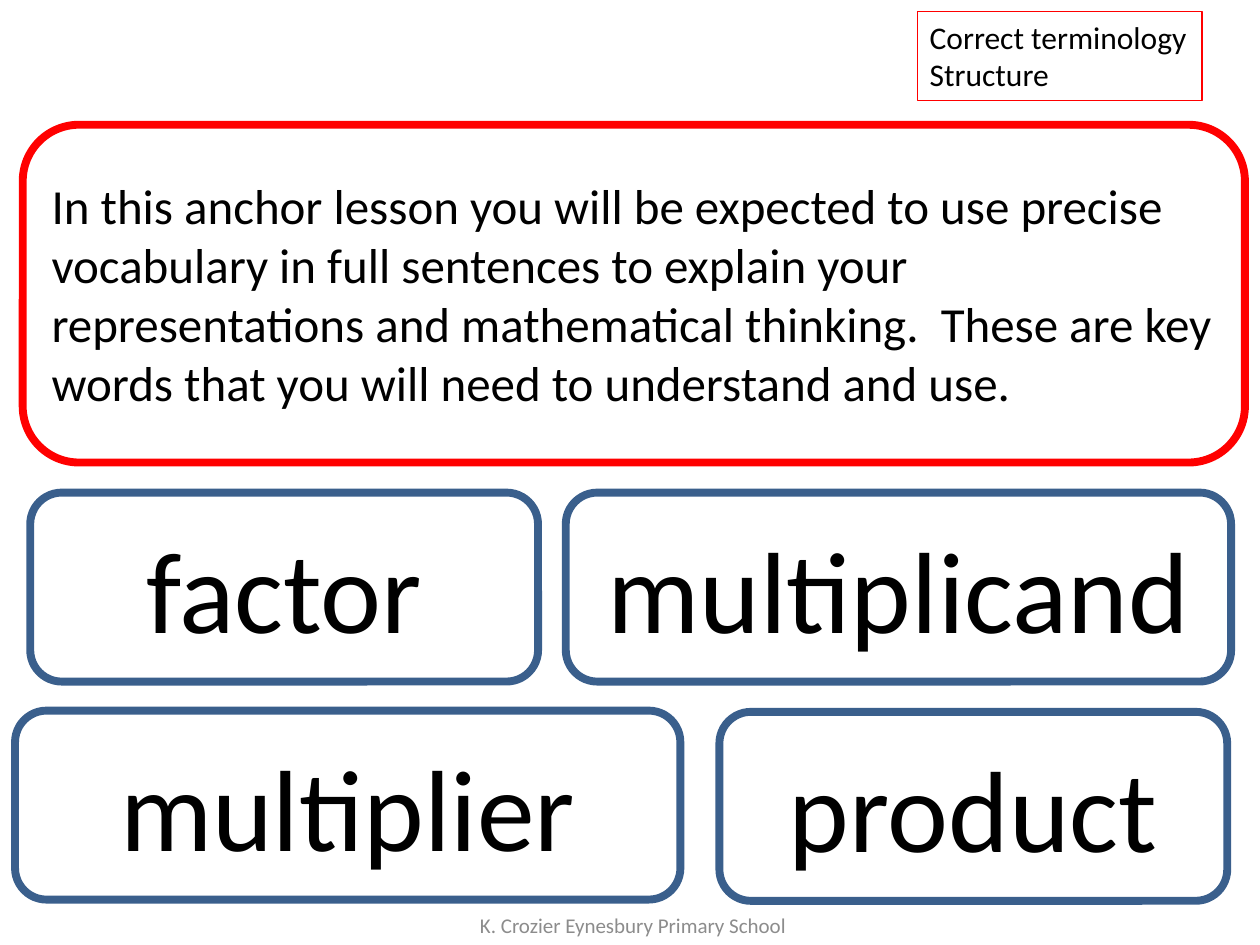
from pptx import Presentation
from pptx.dml.color import RGBColor
from pptx.enum.shapes import MSO_SHAPE
from pptx.enum.text import MSO_ANCHOR, MSO_AUTO_SIZE, PP_ALIGN
from pptx.util import Pt

FONT = "Calibri"
BLACK, RED, BLUE, GREY = "000000", "FF0000", "3A5F8C", "8C8C8C"
CARD_HEIGHT = 108
NARROW, WIDE = 290.2, 380.2

# word, left, top, width
WORD_CARDS = [
    ("multiplicand", 323.3, 281.5, WIDE),
    ("multiplier", 8.6, 406.1, WIDE),
    ("product", 411.1, 406.8, NARROW),
    ("factor", 17.3, 281.5, NARROW),
]
INTRODUCTION = (
    "In this anchor lesson you will be expected to use precise vocabulary "
    "in full sentences to explain your representations and mathematical "
    "thinking.  These are key words that you will need to understand and use."
)


def colour(value):
    return RGBColor.from_string(value)


def write(box, lines, size, align, text_colour=BLACK, anchor=MSO_ANCHOR.MIDDLE):
    """Put one paragraph per line into the box."""
    frame = box.text_frame
    frame.word_wrap = True
    frame.vertical_anchor = anchor
    for index, line in enumerate(lines):
        para = frame.add_paragraph() if index else frame.paragraphs[0]
        para.alignment = align
        span = para.add_run()
        span.text = line
        span.font.name = FONT
        span.font.size = Pt(size)
        span.font.color.rgb = colour(text_colour)


def add_outline(page, preset, bounds, line_colour, line_width):
    """Add an unfilled shape; bounds are left, top, width, height."""
    box = page.shapes.add_shape(preset, *map(Pt, bounds))
    box.shadow.inherit = False
    box.fill.background()
    box.line.color.rgb = colour(line_colour)
    box.line.width = Pt(line_width)
    return box


def add_word_card(page, word, left, top, width):
    card = add_outline(page, MSO_SHAPE.ROUNDED_RECTANGLE,
                       (left, top, width, CARD_HEIGHT), BLUE, 4.5)
    write(card, [word], 66, PP_ALIGN.CENTER)


def add_focus_label(page):
    label = add_outline(page, MSO_SHAPE.RECTANGLE,
                        (524.2, 6.5, 162.7, 51), RED, 0.75)
    write(label, ["Correct terminology", "Structure"], 18, PP_ALIGN.LEFT,
          anchor=MSO_ANCHOR.TOP)
    label.text_frame.word_wrap = False
    label.text_frame.auto_size = MSO_AUTO_SIZE.SHAPE_TO_FIT_TEXT


def add_introduction(page):
    panel = add_outline(page, MSO_SHAPE.ROUNDED_RECTANGLE,
                        (13, 71.3, 698.4, 193), RED, 4.5)
    write(panel, [INTRODUCTION], 28, PP_ALIGN.LEFT)


def add_footer(page):
    footer = page.shapes.add_textbox(*map(Pt, (247.7, 514.1, 228.2, 28.8)))
    write(footer, ["K. Crozier Eynesbury Primary School"], 12,
          PP_ALIGN.CENTER, GREY)


def main():
    deck = Presentation()
    deck.slide_width, deck.slide_height = Pt(720), Pt(540)
    page = deck.slides.add_slide(deck.slide_layouts[6])
    for card in WORD_CARDS:
        add_word_card(page, *card)
    add_focus_label(page)
    add_introduction(page)
    add_footer(page)
    deck.save("out.pptx")


if __name__ == "__main__":
    main()
